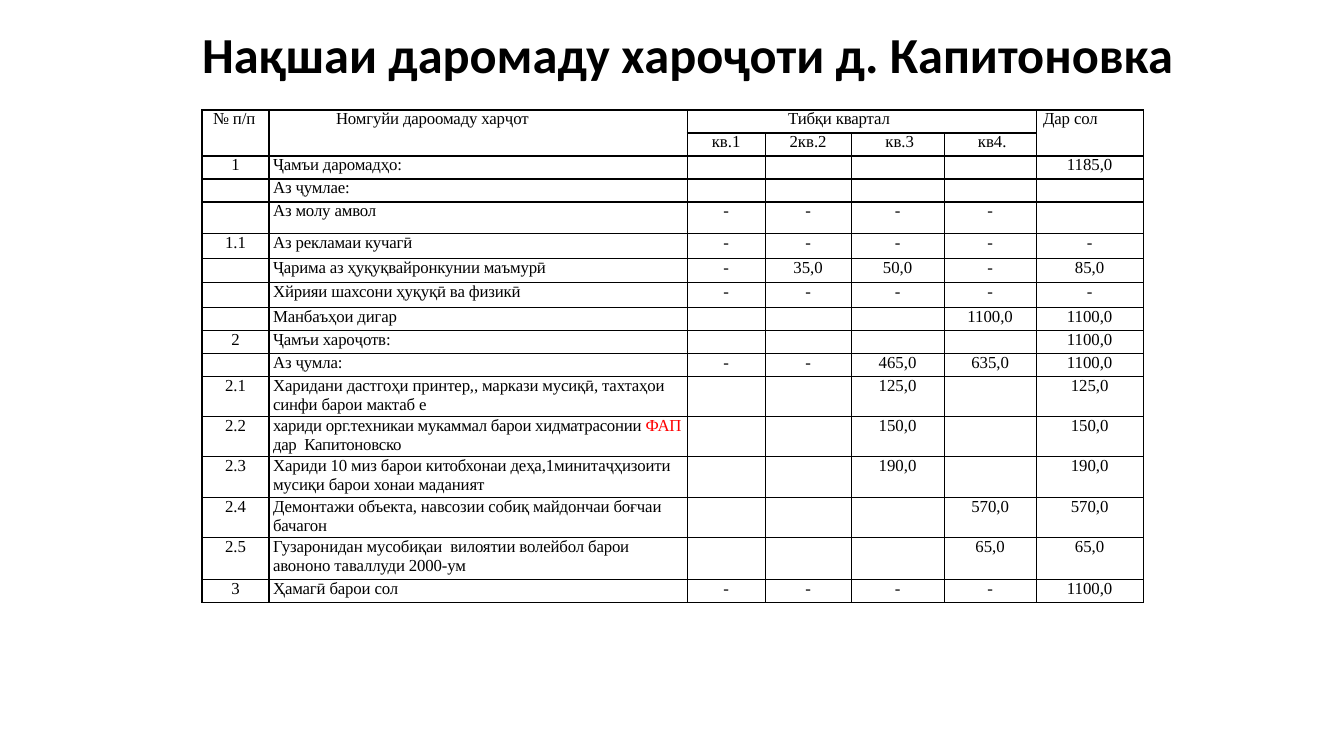
from lxml.etree import SubElement
from pptx import Presentation
from pptx.dml.color import RGBColor
from pptx.enum.text import MSO_ANCHOR, PP_ALIGN
from pptx.oxml import parse_xml
from pptx.oxml.ns import nsdecls, qn
from pptx.util import Inches, Pt

COLORS = {"text": "000000", "border": "000000", "accent": "FF0000"}
TITLE = "Нақшаи даромаду хароҷоти д. Капитоновка"
TITLE_BOX = (201, 22, 1040, 62)
TABLE_LEFT, TABLE_TOP = 202, 110
COLUMN_WIDTHS = [67, 418, 78, 86, 93, 92, 107]
ROW_HEIGHTS = [23, 23, 23, 23, 32, 25, 24, 25, 23, 23, 23, 40, 40, 41, 40, 42, 23]
HIGHLIGHT = "ФАП"

# row, column, last row, last column, text, indent
HEADINGS = [
    (0, 0, 1, 0, "№ п/п", 11),
    (0, 1, 1, 1, "Номгуйи дароомаду харҷот", 67),
    (0, 2, 0, 5, "Тибқи квартал", 101),
    (0, 6, 1, 6, "Дар сол", 7),
]
QUARTERS = ["кв.1", "2кв.2", " кв.3", " кв4."]
FIRST_QUARTER = 2
BUDGET = [
    ("1", "Ҷамъи даромадҳо:", "", "", "", "", "1185,0"),
    ("", "Аз ҷумлае:", "", "", "", "", ""),
    ("", "Аз молу амвол", "-", "-", "-", "-", ""),
    ("1.1", "Аз рекламаи кучагӣ", "-", "-", "-", "-", "-"),
    ("", "Ҷарима аз ҳуқуқвайронкунии маъмурӣ", "-", "35,0", "50,0", "-", "85,0"),
    ("", "Хйрияи шахсони ҳуқуқӣ ва физикӣ", "-", "-", "-", "-", "-"),
    ("", "Манбаъҳои дигар", "", "", "", "1100,0", "1100,0"),
    ("2", "Ҷамъи хароҷотв:", "", "", "", "", "1100,0"),
    ("", "Аз ҷумла:", "-", "-", "465,0", "635,0", "1100,0"),
    ("2.1", "Харидани дастгоҳи принтер,, маркази мусиқӣ, тахтаҳои синфи барои мактаб е",
     "", "", "125,0", "", "125,0"),
    ("2.2", "хариди орг.техникаи мукаммал барои хидматрасонии ФАП дар  Капитоновско",
     "", "", "150,0", "", "150,0"),
    ("2.3", "Хариди 10 миз барои китобхонаи деҳа,1минитаҷҳизоити мусиқи барои хонаи маданият",
     "", "", "190,0", "", "190,0"),
    ("2.4", "Демонтажи объекта, навсозии собиқ майдончаи боғчаи бачагон",
     "", "", "", "570,0", "570,0"),
    ("2.5", "Гузаронидан мусобиқаи  вилоятии волейбол барои авононо таваллуди 2000-ум",
     "", "", "", "65,0", "65,0"),
    ("3", "Ҳамагӣ барои сол", "-", "-", "-", "-", "1100,0"),
]
FIRST_BUDGET_ROW = 2
DESCRIPTION_COLUMN = 1


def px(length):
    return round(length * Inches(1) / 100.8)


def write(frame, text, size=12, font="Times New Roman", bold=False,
          align=PP_ALIGN.LEFT, indent=0, spacing=0):
    """Fill a text frame, colouring the highlighted word; spacing is in 1/100 pt."""
    paragraph = frame.paragraphs[0]
    paragraph.alignment = align
    properties = paragraph._p.get_or_add_pPr()
    properties.set("marL", str(px(indent)))
    properties.set("indent", "0")
    before, word, after = text.partition(HIGHLIGHT)
    for part in filter(None, (before, word, after)):
        run = paragraph.add_run()
        run.text = part
        run.font.size, run.font.name, run.font.bold = Pt(size), font, bold
        color = COLORS["accent" if part == HIGHLIGHT else "text"]
        run.font.color.rgb = RGBColor.from_string(color)
        run._r.get_or_add_rPr().set("spc", str(spacing))


def style_cell(cell):
    cell.margin_left = cell.margin_right = cell.margin_top = cell.margin_bottom = 0
    cell.vertical_anchor = MSO_ANCHOR.TOP
    cell.fill.background()
    properties = cell._tc.get_or_add_tcPr()
    for position, side in enumerate("LRTB"):
        properties.insert(position, parse_xml(
            f'<a:ln{side} {nsdecls("a")} w="{Pt(1)}"><a:solidFill>'
            f'<a:srgbClr val="{COLORS["border"]}"/></a:solidFill></a:ln{side}>'))
    if not cell.text_frame.text:
        # Keeps an empty cell from stretching its row
        end = SubElement(cell.text_frame.paragraphs[0]._p, qn("a:endParaRPr"))
        end.set("sz", "1200")


def add_title(slide):
    title = slide.shapes.title
    title.left, title.top, title.width, title.height = map(px, TITLE_BOX)
    frame = title.text_frame
    frame.margin_left = frame.margin_right = frame.margin_top = frame.margin_bottom = 0
    frame.vertical_anchor = MSO_ANCHOR.MIDDLE
    write(frame, TITLE, size=36, font="Calibri", bold=True, indent=1)


def add_budget_table(slide):
    table = slide.shapes.add_table(
        len(ROW_HEIGHTS), len(COLUMN_WIDTHS), px(TABLE_LEFT), px(TABLE_TOP),
        px(sum(COLUMN_WIDTHS)), px(sum(ROW_HEIGHTS))).table
    table.first_row = table.horz_banding = False
    for column, width in zip(table.columns, COLUMN_WIDTHS):
        column.width = px(width)
    for row, height in zip(table.rows, ROW_HEIGHTS):
        row.height = px(height)

    for top, left, bottom, right, text, indent in HEADINGS:
        cell = table.cell(top, left)
        cell.merge(table.cell(bottom, right))
        write(cell.text_frame, text, indent=indent, spacing=-10)
    for column, text in enumerate(QUARTERS, FIRST_QUARTER):
        write(table.cell(1, column).text_frame, text, align=PP_ALIGN.CENTER)
    for row, values in enumerate(BUDGET, FIRST_BUDGET_ROW):
        for column, text in enumerate(values):
            frame = table.cell(row, column).text_frame
            if column == DESCRIPTION_COLUMN:
                write(frame, text, indent=4, spacing=-20 if HIGHLIGHT in text else -10)
            else:
                write(frame, text, align=PP_ALIGN.CENTER)
    for cell in table.iter_cells():
        style_cell(cell)


def main():
    presentation = Presentation()
    presentation.slide_width, presentation.slide_height = Inches(13.33), Inches(7.5)
    slide = presentation.slides.add_slide(presentation.slide_layouts[5])
    add_title(slide)
    add_budget_table(slide)
    presentation.save("out.pptx")


if __name__ == "__main__":
    main()
